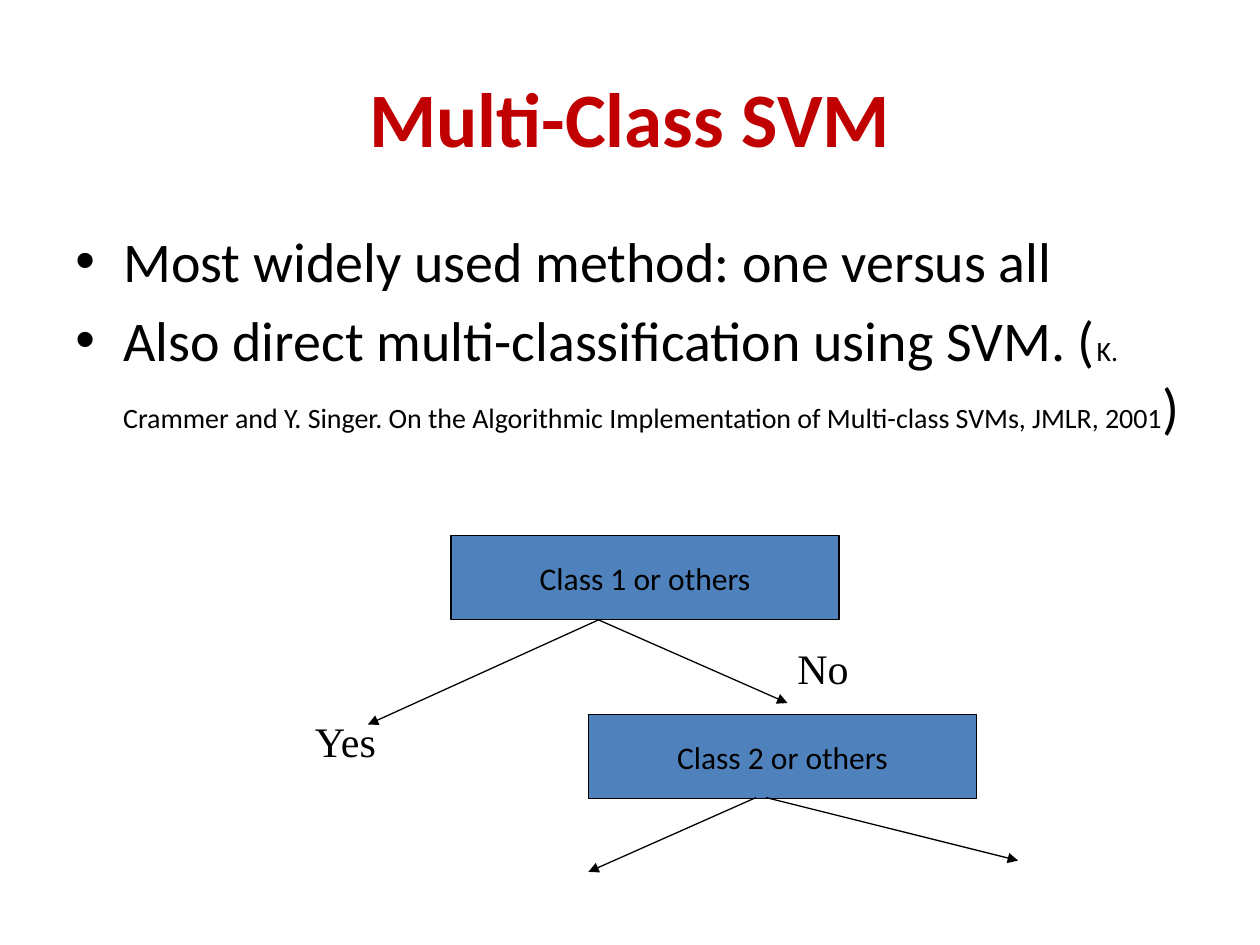
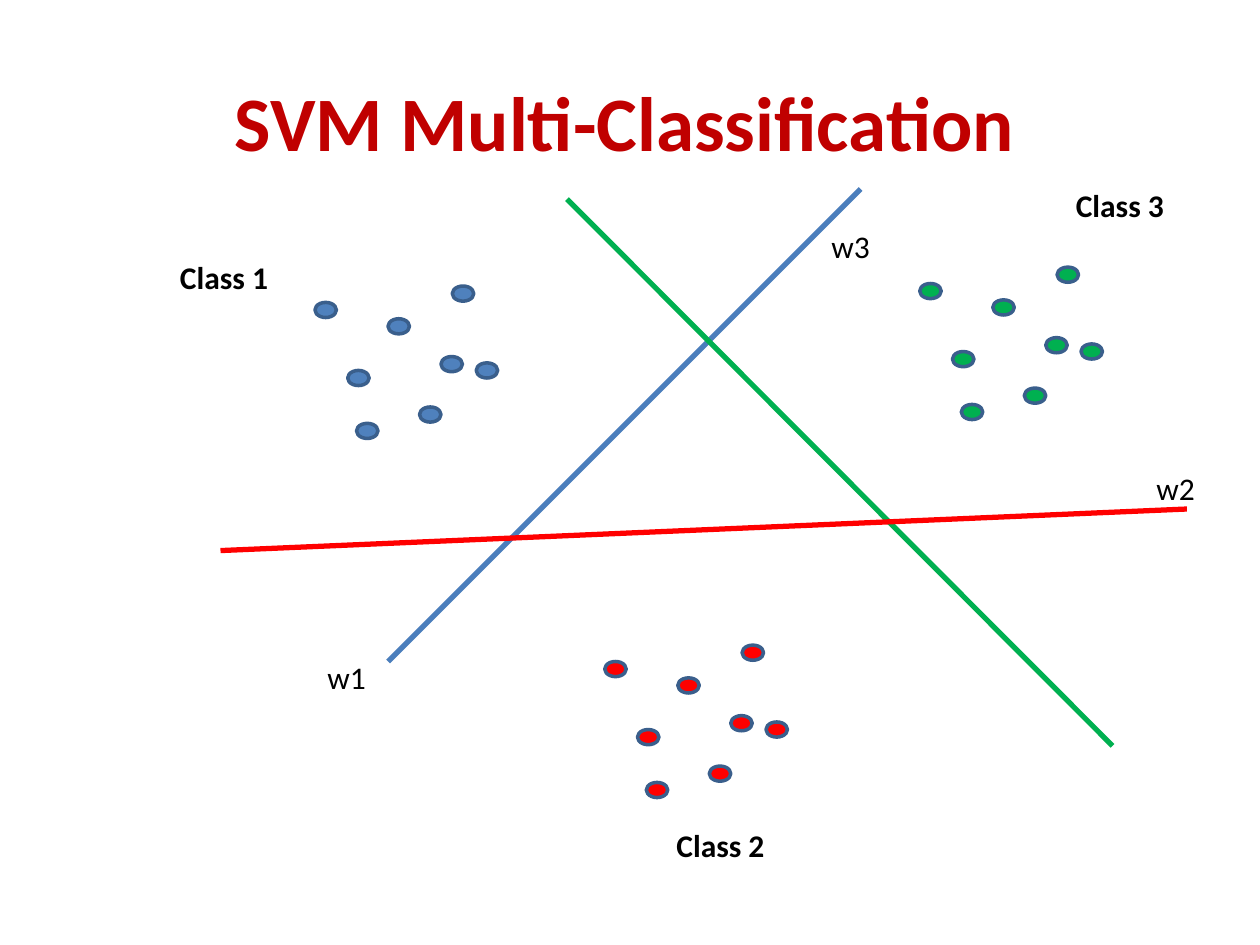
from pptx import Presentation
from pptx.dml.color import RGBColor
from pptx.enum.shapes import MSO_CONNECTOR, MSO_SHAPE
from pptx.enum.text import MSO_ANCHOR, MSO_AUTO_SIZE, PP_ALIGN
from pptx.oxml.ns import qn
from pptx.util import Inches, Pt
from lxml.etree import SubElement

BLACK = RGBColor(0x00, 0x00, 0x00)
TITLE_RED = RGBColor(0xC0, 0x00, 0x00)
BLUE = RGBColor(0x4F, 0x81, 0xBD)
LINE_BLUE = RGBColor(0x4B, 0x7E, 0xBC)
OUTLINE_BLUE = RGBColor(0x3A, 0x5F, 0x8C)
GREEN = RGBColor(0x00, 0xB0, 0x50)
RED = RGBColor(0xFF, 0x00, 0x00)

POINT_OFFSETS = [
    (0, 0), (1.09, -0.13), (0.58, 0.13), (0.33, 0.96),
    (0.26, 0.54), (1, 0.43), (0.83, 0.83), (1.28, 0.48),
]


class Deck:
    body_font = "Calibri"
    answer_font = "Times New Roman"

    def __init__(self):
        self.presentation = Presentation()
        self.presentation.slide_width = Inches(10)
        self.presentation.slide_height = Inches(7.5)
        self.slide = None

    def new_slide(self, title, left, top):
        layout = self.presentation.slide_layouts[6]
        self.slide = self.presentation.slides.add_slide(layout)
        frame = self.text_frame(left, top, 9, 1.25)
        frame.word_wrap = True
        frame.vertical_anchor = MSO_ANCHOR.MIDDLE
        paragraph = frame.paragraphs[0]
        paragraph.text = title
        paragraph.alignment = PP_ALIGN.CENTER
        self.style(paragraph.font, 44, TITLE_RED, bold=True)

    def text_frame(self, left, top, width, height):
        box = self.slide.shapes.add_textbox(
            Inches(left), Inches(top), Inches(width), Inches(height))
        return box.text_frame

    def style(self, font, size, color=BLACK, bold=False, name=body_font):
        font.name = name
        font.size = Pt(size)
        font.bold = bold
        font.color.rgb = color

    def bullets(self, left, top, width, height, items):
        frame = self.text_frame(left, top, width, height)
        frame.word_wrap = True
        for index, runs in enumerate(items):
            paragraph = frame.add_paragraph() if index else frame.paragraphs[0]
            paragraph.space_before = Pt(6.4)
            properties = paragraph._p.get_or_add_pPr()
            properties.set("marL", str(Inches(0.38)))
            properties.set("indent", str(Inches(-0.38)))
            SubElement(properties, qn("a:buFont"), typeface="Arial")
            SubElement(properties, qn("a:buChar"), char="•")
            for text, size in runs:
                run = paragraph.add_run()
                run.text = text
                self.style(run.font, size)

    def label(self, text, left, top, width, height=0.4, size=18,
              bold=False, name=body_font):
        frame = self.text_frame(left, top, width, height)
        frame.word_wrap = False
        frame.auto_size = MSO_AUTO_SIZE.SHAPE_TO_FIT_TEXT
        paragraph = frame.paragraphs[0]
        paragraph.text = text
        self.style(paragraph.font, size, bold=bold, name=name)

    def answer(self, text, left, top, width):
        self.label(text, left, top, width, 0.5, 24, name=self.answer_font)

    def shape(self, kind, left, top, width, height, fill, line, weight):
        shape = self.slide.shapes.add_shape(
            kind, Inches(left), Inches(top), Inches(width), Inches(height))
        shape.shadow.inherit = False
        shape.fill.solid()
        shape.fill.fore_color.rgb = fill
        shape.line.color.rgb = line
        shape.line.width = Pt(weight)
        return shape

    def decision(self, text, left, top):
        shape = self.shape(MSO_SHAPE.RECTANGLE, left, top, 3.08, 0.67,
                           BLUE, BLACK, 0.75)
        frame = shape.text_frame
        frame.word_wrap = False
        frame.vertical_anchor = MSO_ANCHOR.MIDDLE
        paragraph = frame.paragraphs[0]
        paragraph.text = text
        paragraph.alignment = PP_ALIGN.CENTER
        self.style(paragraph.font, 18)

    def cluster(self, left, top, color):
        for right, down in POINT_OFFSETS:
            self.shape(MSO_SHAPE.OVAL, left + right, top + down, 0.17, 0.12,
                       color, OUTLINE_BLUE, 2)

    def line(self, start, end, color, weight):
        connector = self.slide.shapes.add_connector(
            MSO_CONNECTOR.STRAIGHT, *map(Inches, start + end))
        connector.line.color.rgb = color
        connector.line.width = Pt(weight)
        SubElement(connector._element.spPr, qn("a:effectLst"))
        return connector

    def arrow(self, start, end):
        connector = self.line(start, end, BLACK, 0.75)
        SubElement(connector.line._get_or_add_ln(), qn("a:tailEnd"),
                   type="triangle")


def build_decision_slide(deck):
    deck.new_slide("Multi-Class SVM", 0.5, 0.3)
    deck.bullets(0.5, 1.75, 9, 4.95, [
        [("Most widely used method: one versus all", 32)],
        [("Also direct multi-classification using SVM. (", 32),
         ("K. Crammer and Y. Singer. On the Algorithmic Implementation of "
          "Multi-class SVMs, JMLR, 2001", 16),
         (")", 32)],
    ])
    deck.decision("Class 1 or others", 3.58, 4.25)
    deck.arrow((4.75, 4.92), (2.92, 5.75))
    deck.answer("Yes", 2.4, 5.63, 0.72)
    deck.arrow((4.75, 4.92), (6.25, 5.58))
    deck.answer("No", 6.23, 5.05, 0.61)
    deck.decision("Class 2 or others", 4.67, 5.67)
    deck.arrow((6, 6.33), (4.67, 6.92))
    deck.arrow((6.08, 6.33), (8.08, 6.83))


def build_boundaries_slide(deck):
    deck.new_slide("SVM Multi-Classification", 0.46, 0.33)
    for left, top, color in [(2.5, 2.4, BLUE), (4.8, 5.25, RED),
                             (7.3, 2.25, GREEN)]:
        deck.cluster(left, top, color)
    for start, end, color in [((3.08, 5.25), (6.83, 1.5), LINE_BLUE),
                              ((4.5, 1.58), (8.83, 5.92), GREEN),
                              ((1.75, 4.37), (9.42, 4.04), RED)]:
        deck.line(start, end, color, 3)
    for text, left, top in [("Class 1", 1.33, 2), ("Class 2", 5.27, 6.51),
                            ("Class 3", 8.44, 1.43)]:
        deck.label(text, left, top, 0.9, bold=True)
    for text, left, top in [("w1", 2.5, 5.17), ("w2", 9.08, 3.67),
                            ("w3", 6.5, 1.75)]:
        deck.label(text, left, top, 0.51)


def main():
    deck = Deck()
    build_decision_slide(deck)
    build_boundaries_slide(deck)
    deck.presentation.save("out.pptx")


if __name__ == "__main__":
    main()
